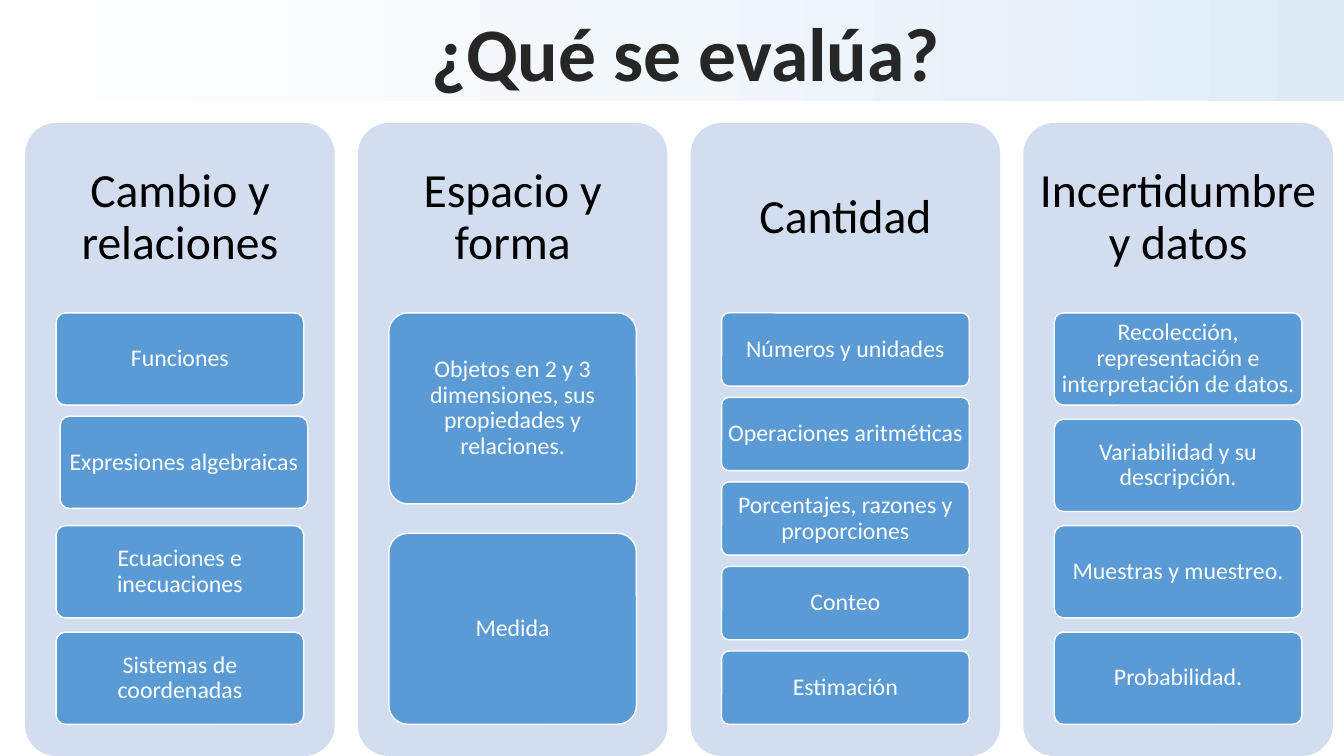
from copy import deepcopy

from lxml.etree import SubElement
from pptx import Presentation
from pptx.dml.color import RGBColor
from pptx.enum.shapes import MSO_SHAPE as Preset
from pptx.enum.text import MSO_ANCHOR as Anchor, MSO_AUTO_SIZE as AutoSize, PP_ALIGN as Align
from pptx.oxml.ns import qn
from pptx.util import Inches, Pt

FONT = "Calibri"
PANEL_LEFT, PANEL_TOP = 0.25, 1.22
PANEL_WIDTH, PANEL_HEIGHT = 3.07, 6.28
PANEL_PITCH = 3.3
HEADING_SHARE = 0.3
STACK_SHARE = 0.65
ITEM_SHARE = 0.8
GAP_RATIO = 0.154
NUDGES = {"Expresiones algebraicas": (0.04, -0.03)}

AREAS = [
    ("Cambio y relaciones", [
        "Funciones",
        "Expresiones algebraicas",
        "Ecuaciones e inecuaciones",
        "Sistemas de coordenadas",
    ]),
    ("Espacio y forma", [
        "Objetos en 2 y 3 dimensiones, sus propiedades y relaciones.",
        "Medida",
    ]),
    ("Cantidad", [
        "Números y unidades",
        "Operaciones aritméticas",
        "Porcentajes, razones y proporciones",
        "Conteo",
        "Estimación",
    ]),
    ("Incertidumbre y datos", [
        "Recolección, representación e interpretación de datos.",
        "Variabilidad y su descripción.",
        "Muestras y muestreo.",
        "Probabilidad.",
    ]),
]


def color(value):
    return RGBColor.from_string(value)


def write(shape, text, size, text_color, inset, line_spacing=0.9):
    frame = shape.text_frame
    frame.word_wrap = True
    frame.vertical_anchor = Anchor.MIDDLE
    frame.margin_left = frame.margin_right = Inches(inset)
    frame.margin_top = frame.margin_bottom = Inches(inset)
    paragraph = frame.paragraphs[0]
    paragraph.alignment = Align.CENTER
    paragraph.line_spacing = line_spacing
    run = paragraph.add_run()
    run.text = text
    run.font.name = FONT
    run.font.size = Pt(size)
    run.font.color.rgb = color(text_color)
    return run


def add_box(slide, preset, left, top, width, height):
    shape = slide.shapes.add_shape(
        preset, Inches(left), Inches(top), Inches(width), Inches(height))
    shape.shadow.inherit = False
    shape.line.fill.background()
    return shape


def add_rounded(slide, left, top, width, height, fill):
    shape = add_box(slide, Preset.ROUNDED_RECTANGLE, left, top, width, height)
    shape.adjustments[0] = 0.1
    shape.fill.solid()
    shape.fill.fore_color.rgb = color(fill)
    return shape


def add_band(slide):
    band = add_box(slide, Preset.RECTANGLE, 0, 0, 13.33, 1)
    band.fill.gradient()
    band.fill.gradient_angle = 180
    stop_list = band.fill._fill._gradFill.gsLst
    stop_list.append(deepcopy(stop_list[-1]))
    shades = [(0, "DEEBF7"), (0.5, "F2F7FC"), (1, "FFFFFF")]
    for stop, (position, shade) in zip(band.fill.gradient_stops, shades):
        stop.position = position
        stop.color.rgb = color(shade)
    slide.shapes._spTree.insert(2, band._element)


def add_title(slide, text):
    title = slide.shapes.title
    title.left, title.top = Inches(4.15), Inches(0)
    title.width, title.height = Inches(5.3), Inches(1.01)
    run = write(title, text, 54, "262626", 0.05, 1.0)
    title.text_frame.word_wrap = False
    title.text_frame.auto_size = AutoSize.SHAPE_TO_FIT_TEXT
    run.font.bold = True
    properties = run.font._element
    outline = SubElement(properties, qn("a:ln"), w=str(Pt(1.06)))
    fill = SubElement(outline, qn("a:solidFill"))
    SubElement(fill, qn("a:srgbClr"), val="FFFFFF")
    properties.insert(0, outline)


def add_item(slide, text, left, top, width, height):
    shift_x, shift_y = NUDGES.get(text, (0, 0))
    item = add_rounded(slide, left + shift_x, top + shift_y, width, height, "5B9BD5")
    item.line.color.rgb = color("FFFFFF")
    item.line.width = Pt(1)
    write(item, text, 17, "FFFFFF", 0.04)


def add_area(slide, column, heading, items):
    left = PANEL_LEFT + column * PANEL_PITCH
    add_rounded(slide, left, PANEL_TOP, PANEL_WIDTH, PANEL_HEIGHT, "D2DEEF")
    heading_height = PANEL_HEIGHT * HEADING_SHARE
    heading_box = slide.shapes.add_textbox(
        Inches(left), Inches(PANEL_TOP), Inches(PANEL_WIDTH), Inches(heading_height))
    write(heading_box, heading, 34, "000000", 0.14)

    count = len(items)
    height = PANEL_HEIGHT * STACK_SHARE / (count + GAP_RATIO * (count - 1))
    width = PANEL_WIDTH * ITEM_SHARE
    item_left = left + (PANEL_WIDTH - width) / 2
    for row, text in enumerate(items):
        top = PANEL_TOP + heading_height + row * height * (1 + GAP_RATIO)
        add_item(slide, text, item_left, top, width, height)


def main():
    presentation = Presentation()
    presentation.slide_width = Inches(13.33)
    presentation.slide_height = Inches(7.5)
    slide = presentation.slides.add_slide(presentation.slide_layouts[5])
    add_band(slide)
    add_title(slide, "¿Qué se evalúa?")
    for column, (heading, items) in enumerate(AREAS):
        add_area(slide, column, heading, items)
    presentation.save("out.pptx")


if __name__ == "__main__":
    main()
